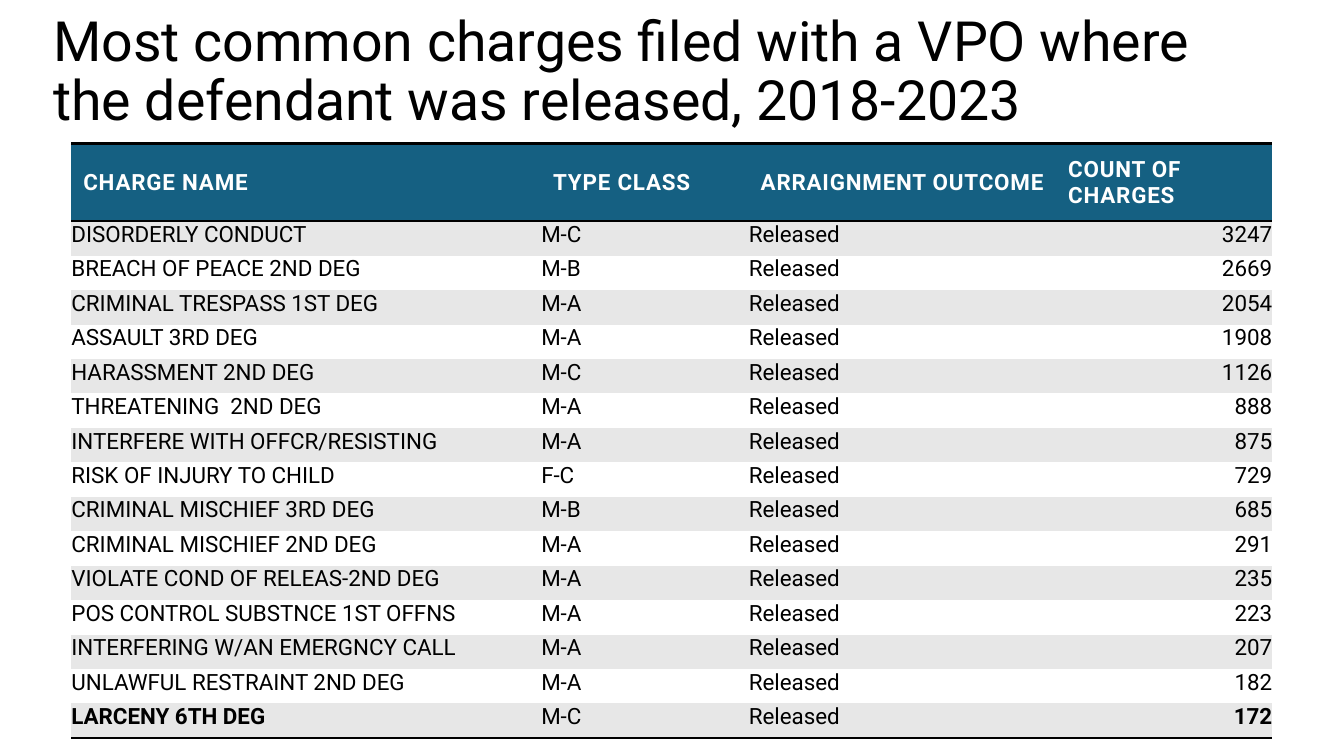
from lxml.etree import SubElement
from pptx import Presentation
from pptx.dml.color import RGBColor
from pptx.enum.text import MSO_ANCHOR, PP_ALIGN
from pptx.oxml.ns import qn
from pptx.util import Cm, Pt

COLORS = {"text": "000000", "header": "156082", "header_text": "FFFFFF",
          "band": "E7E7E7", "plain": "FFFFFF", "rule": "000000"}
FONT = "Roboto"
NO_GRID_STYLE = "{2D5ABB26-0587-4C30-8999-92F81FD0307C}"

TITLE = "Most common charges filed with a VPO where the defendant was released, 2018-2023"
HEADINGS = ["CHARGE NAME", "TYPE CLASS", "ARRAIGNMENT OUTCOME", "COUNT OF CHARGES"]
OUTCOME = "Released"
CHARGES = [
    ("DISORDERLY CONDUCT", "M-C", 3247),
    ("BREACH OF PEACE 2ND DEG", "M-B", 2669),
    ("CRIMINAL TRESPASS 1ST DEG", "M-A", 2054),
    ("ASSAULT 3RD DEG", "M-A", 1908),
    ("HARASSMENT 2ND DEG", "M-C", 1126),
    ("THREATENING  2ND DEG", "M-A", 888),
    ("INTERFERE WITH OFFCR/RESISTING", "M-A", 875),
    ("RISK OF INJURY TO CHILD", "F-C", 729),
    ("CRIMINAL MISCHIEF 3RD DEG", "M-B", 685),
    ("CRIMINAL MISCHIEF 2ND DEG", "M-A", 291),
    ("VIOLATE COND OF RELEAS-2ND DEG", "M-A", 235),
    ("POS CONTROL SUBSTNCE 1ST OFFNS", "M-A", 223),
    ("INTERFERING W/AN EMERGNCY CALL", "M-A", 207),
    ("UNLAWFUL RESTRAINT 2ND DEG", "M-A", 182),
    ("LARCENY 6TH DEG", "M-C", 172),
]
COLUMN_WIDTHS = [11.84, 5.23, 7.75, 5.44]
HEADER_HEIGHT = 1.9
ROW_HEIGHT = 0.85


def color(name):
    return RGBColor.from_string(COLORS[name])


def format_run(run, size, color_name, bold=False):
    run.font.name = FONT
    run.font.size = Pt(size)
    run.font.bold = bold
    run.font.color.rgb = color(color_name)


def add_rules(cell, sides):
    """Draw 2 pt rules on the given sides: T for top, B for bottom."""
    properties = cell._tc.get_or_add_tcPr()
    for side in sides:
        rule = SubElement(properties, qn(f"a:ln{side}"), w=str(Pt(2)))
        rule_fill = SubElement(rule, qn("a:solidFill"))
        SubElement(rule_fill, qn("a:srgbClr"), val=COLORS["rule"])


def fill_cell(cell, text, fill, text_color, insets, bold=False, sides=""):
    add_rules(cell, sides)
    cell.fill.solid()
    cell.fill.fore_color.rgb = color(fill)
    cell.vertical_anchor = MSO_ANCHOR.MIDDLE
    (cell.margin_left, cell.margin_top,
     cell.margin_right, cell.margin_bottom) = map(Cm, insets)
    cell.text_frame.text = text
    paragraph = cell.text_frame.paragraphs[0]
    format_run(paragraph.runs[0], 16, text_color, bold)
    return paragraph


def add_title(slide, left, top, width, height):
    title = slide.shapes.add_textbox(Cm(left), Cm(top), Cm(width), Cm(height))
    frame = title.text_frame
    frame.word_wrap = True
    frame.vertical_anchor = MSO_ANCHOR.MIDDLE
    frame.text = TITLE
    frame.paragraphs[0].line_spacing = 0.9
    format_run(frame.paragraphs[0].runs[0], 39.6, "text")


def add_charge_table(slide, left, top):
    height = HEADER_HEIGHT + ROW_HEIGHT * len(CHARGES)
    frame = slide.shapes.add_table(len(CHARGES) + 1, len(HEADINGS), Cm(left), Cm(top),
                                   Cm(sum(COLUMN_WIDTHS)), Cm(height))
    charges = frame.table
    frame._element.find(".//" + qn("a:tableStyleId")).text = NO_GRID_STYLE
    charges.horz_banding = False
    for column, width in zip(charges.columns, COLUMN_WIDTHS):
        column.width = Cm(width)

    # Header row
    charges.rows[0].height = Cm(HEADER_HEIGHT)
    for column, heading in enumerate(HEADINGS):
        paragraph = fill_cell(charges.cell(0, column), heading, "header", "header_text",
                              (0.3, 0.3, 0.3, 0.3), bold=True, sides="TB")
        paragraph.runs[0].font._element.set("spc", "60")

    # Banded charge rows, the last one emphasised and ruled off
    for row, (charge, type_class, count) in enumerate(CHARGES, start=1):
        charges.rows[row].height = Cm(ROW_HEIGHT)
        is_last = row == len(CHARGES)
        for column, value in enumerate((charge, type_class, OUTCOME, str(count))):
            paragraph = fill_cell(charges.cell(row, column), value,
                                  "band" if row % 2 else "plain", "text",
                                  (0, 0, 0, 0.19),
                                  bold=is_last and column in (0, 3),
                                  sides="B" if is_last else "")
            if column == 3:
                paragraph.alignment = PP_ALIGN.RIGHT


def main():
    presentation = Presentation()
    presentation.slide_width = Cm(33.87)
    presentation.slide_height = Cm(19.05)
    slide = presentation.slides.add_slide(presentation.slide_layouts[6])
    add_title(slide, 1.09, 0, 29.21, 3.68)
    add_charge_table(slide, 1.8, 3.62)
    presentation.save("out.pptx")


if __name__ == "__main__":
    main()
